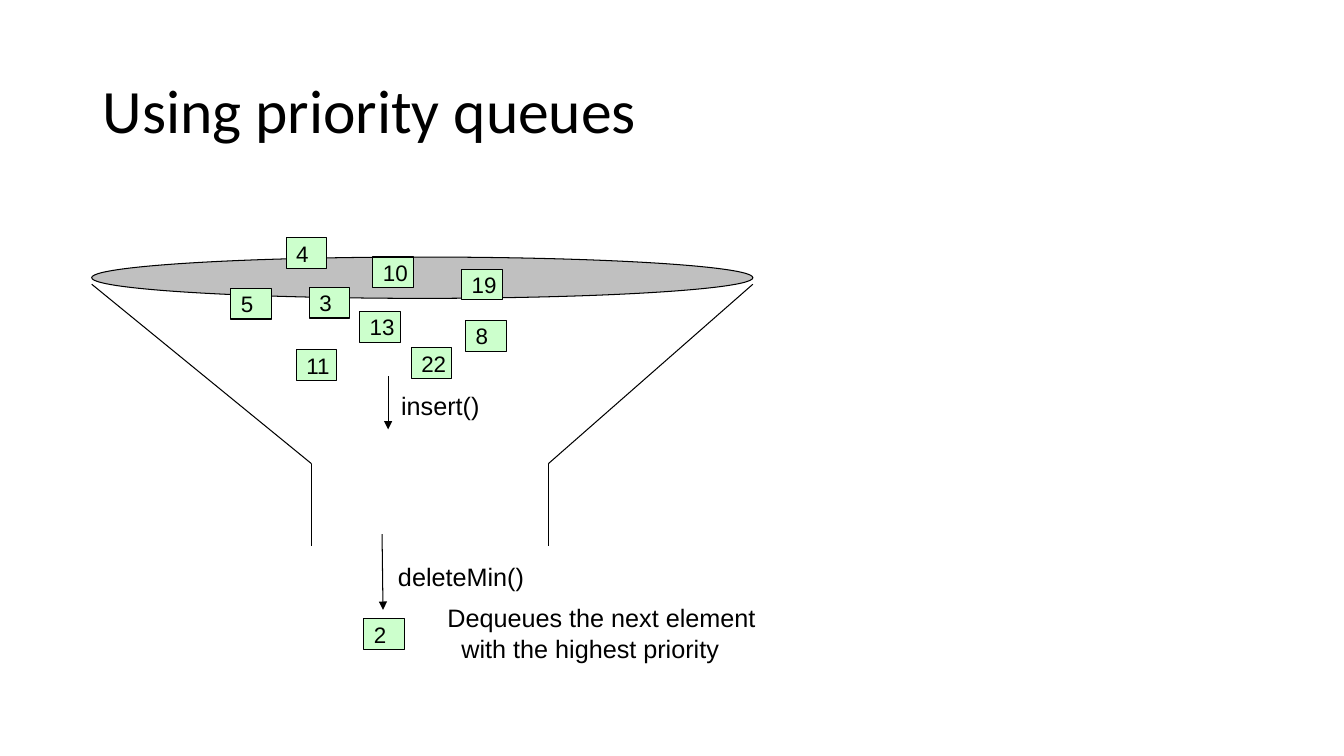
from dataclasses import dataclass

from lxml import etree
from pptx import Presentation
from pptx.dml.color import RGBColor
from pptx.enum import shapes, text
from pptx.oxml import ns
from pptx.util import Pt

BLACK = RGBColor(0x00, 0x00, 0x00)
GREY = RGBColor(0xC0, 0xC0, 0xC0)
GREEN = RGBColor(0xCC, 0xFF, 0xCC)

LINE_WIDTH = 0.75
KEY_WIDTH, KEY_HEIGHT = 29, 22


@dataclass(frozen=True)
class Key:
    """A queued number and the top left corner of its box."""
    number: int
    left: float
    top: float


@dataclass(frozen=True)
class Segment:
    x1: float
    y1: float
    x2: float
    y2: float
    arrow: bool = False


@dataclass(frozen=True)
class Label:
    lines: tuple[str, ...]
    left: float
    top: float
    width: float
    height: float
    size: float = 18
    font: str = "Arial"
    indent: float = 0  # left margin of every line after the first


RIM_LEFT, RIM_RIGHT, RIM_TOP, RIM_HEIGHT = 65.5, 537.8, 183.6, 29.5
NECK_LEFT, NECK_RIGHT = 222.5, 391.7
CONE_TOP, NECK_TOP, NECK_BOTTOM = 203, 331.2, 390.2

FUNNEL_WALLS = [
    segment
    for rim, neck in ((RIM_LEFT, NECK_LEFT), (RIM_RIGHT, NECK_RIGHT))
    for segment in (Segment(rim, CONE_TOP, neck, NECK_TOP),
                    Segment(neck, NECK_TOP, neck, NECK_BOTTOM))
]

KEYS = [
    Key(5, 164.9, 205.9), Key(3, 221, 205.2), Key(10, 266.4, 183.6),
    Key(13, 257, 222.5), Key(19, 329.8, 192.2), Key(8, 332.6, 229),
    Key(4, 204.5, 169.9), Key(22, 293.8, 248.4), Key(11, 211.7, 249.8),
    Key(2, 259.9, 442.1),
]

ARROWS = [
    Segment(277.2, 268.6, 277.2, 306.7, arrow=True),
    Segment(272.9, 381.6, 273.6, 435.6, arrow=True),
]

TITLE = Label(("Using priority queues",), 66.2, 28.8, 828, 104.4, 44, "Calibri")
LABELS = [
    Label(("insert()",), 279.4, 275, 70.6, 28.8),
    Label(("deleteMin()",), 277.2, 397.4, 104.4, 28.8),
    Label(("Dequeues the next element", "with the highest priority"),
          312.5, 427, 241.9, 51.1, indent=10),
]


def add_segment(parent, segment: Segment) -> None:
    line = parent.add_connector(
        shapes.MSO_CONNECTOR.STRAIGHT,
        Pt(segment.x1), Pt(segment.y1), Pt(segment.x2), Pt(segment.y2))
    line.line.color.rgb = BLACK
    line.line.width = Pt(LINE_WIDTH)
    if segment.arrow:
        etree.SubElement(line.line._get_or_add_ln(), ns.qn("a:tailEnd"), type="triangle")
    etree.SubElement(line._element.spPr, ns.qn("a:effectLst"))


def add_filled(parent, kind: shapes.MSO_SHAPE, left: float, top: float,
               width: float, height: float, fill: RGBColor):
    shape = parent.add_shape(kind, Pt(left), Pt(top), Pt(width), Pt(height))
    shape.shadow.inherit = False
    shape.fill.solid()
    shape.fill.fore_color.rgb = fill
    shape.line.color.rgb = BLACK
    shape.line.width = Pt(LINE_WIDTH)
    return shape


def style(para, size: float, font: str) -> None:
    para.alignment = text.PP_ALIGN.LEFT
    para.font.size = Pt(size)
    para.font.name = font
    para.font.color.rgb = BLACK


def add_key(parent, key: Key) -> None:
    box = add_filled(parent, shapes.MSO_SHAPE.RECTANGLE, key.left, key.top,
                     KEY_WIDTH, KEY_HEIGHT, GREEN)
    frame = box.text_frame
    frame.word_wrap = False
    frame.vertical_anchor = text.MSO_ANCHOR.MIDDLE
    frame.text = str(key.number)
    style(frame.paragraphs[0], 16, "Arial")


def add_label(parent, label: Label):
    box = parent.add_textbox(Pt(label.left), Pt(label.top),
                             Pt(label.width), Pt(label.height))
    frame = box.text_frame
    frame.word_wrap = False
    frame.text = "\n".join(label.lines)
    for index, para in enumerate(frame.paragraphs):
        style(para, label.size, label.font)
        if index and label.indent:
            para._p.get_or_add_pPr().set("marL", str(Pt(label.indent)))
    return frame


def add_title(parent) -> None:
    frame = add_label(parent, TITLE)
    frame.word_wrap = True
    frame.vertical_anchor = text.MSO_ANCHOR.MIDDLE
    frame.paragraphs[0].line_spacing = 0.9


def add_funnel(parent) -> None:
    funnel = parent.add_group_shape().shapes
    for wall in FUNNEL_WALLS:
        add_segment(funnel, wall)
    add_filled(funnel, shapes.MSO_SHAPE.OVAL, RIM_LEFT, RIM_TOP,
               RIM_RIGHT - RIM_LEFT, RIM_HEIGHT, GREY)


def main() -> None:
    deck = Presentation()
    deck.slide_width, deck.slide_height = Pt(960), Pt(540)
    page = deck.slides.add_slide(deck.slide_layouts[6]).shapes
    add_title(page)
    add_funnel(page)
    for key in KEYS:
        add_key(page, key)
    for arrow in ARROWS:
        add_segment(page, arrow)
    for label in LABELS:
        add_label(page, label)
    deck.save("out.pptx")


if __name__ == "__main__":
    main()
